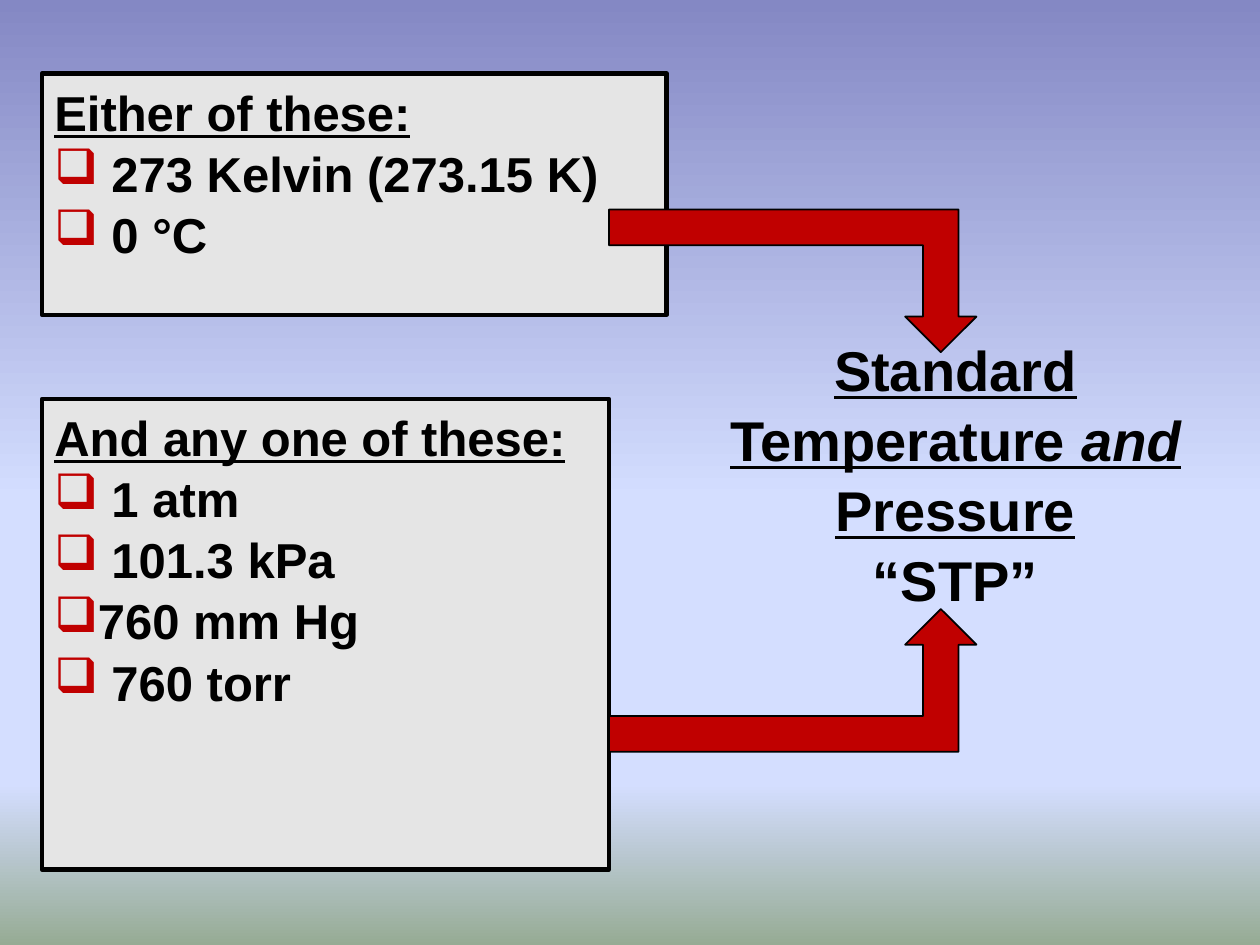
import lxml.etree
import pptx
import pptx.util
import pptx.dml.color
import pptx.enum.shapes
import pptx.enum.text
import pptx.oxml.ns
from pptx.util import Pt

COLORS = {
    "text": "000000",
    "panel": "E5E5E5",
    "accent": "C00000",
    "sky_top": "8488C4",
    "sky": "D4DEFF",
    "ground": "96AB94",
}
SKY_STOPS = [(0, "sky_top"), (53, "sky"), (83, "sky"), (100, "ground")]
FONT = "Arial"
LINE_SPACING = 1.04


def rgb(name):
    return pptx.dml.color.RGBColor.from_string(COLORS[name])


def add_xml(parent, tag, **attributes):
    child = lxml.etree.SubElement(parent, pptx.oxml.ns.qn(tag))
    for key, value in attributes.items():
        child.set(key, str(value))
    return child


def paint_background(slide):
    fill = slide.background.fill
    fill.gradient()
    fill.gradient_angle = 270
    stops = slide.element.xpath(".//p:bg//a:gsLst")[0]
    for stop in list(stops):
        stops.remove(stop)
    for percent, name in SKY_STOPS:
        stop = add_xml(stops, "a:gs", pos=percent * 1000)
        add_xml(stop, "a:srgbClr", val=COLORS[name])


def add_outlined(slide, preset, box, fill, width):
    shape = slide.shapes.add_shape(preset, *map(Pt, box))
    shape.shadow.inherit = False
    shape.fill.solid()
    shape.fill.fore_color.rgb = rgb(fill)
    shape.line.color.rgb = rgb("text")
    shape.line.width = Pt(width)
    return shape


def add_run(paragraph, text, size, underline=False, italic=False):
    run = paragraph.add_run()
    run.text = text
    run.font.name = FONT
    run.font.size = Pt(size)
    run.font.bold = True
    run.font.italic = italic
    run.font.underline = underline
    run.font.color.rgb = rgb("text")


def add_bullet(paragraph):
    properties = paragraph._p.get_or_add_pPr()
    bullet_color = add_xml(properties, "a:buClr")
    add_xml(bullet_color, "a:srgbClr", val=COLORS["accent"])
    add_xml(properties, "a:buChar", char="❑")


def add_conditions(slide, box, heading, choices):
    panel = add_outlined(
        slide, pptx.enum.shapes.MSO_SHAPE.RECTANGLE, box, "panel", 2.5)
    frame = panel.text_frame
    frame.word_wrap = True
    frame.vertical_anchor = pptx.enum.text.MSO_ANCHOR.TOP
    for index, text in enumerate([heading, *choices]):
        paragraph = frame.add_paragraph() if index else frame.paragraphs[0]
        paragraph.alignment = pptx.enum.text.PP_ALIGN.LEFT
        paragraph.line_spacing = LINE_SPACING
        if index:
            add_bullet(paragraph)
        add_run(paragraph, text, 28, underline=index == 0)


def add_title(slide, box):
    title = slide.shapes.add_textbox(*map(Pt, box))
    frame = title.text_frame
    frame.word_wrap = True
    frame.vertical_anchor = pptx.enum.text.MSO_ANCHOR.MIDDLE
    paragraph = frame.paragraphs[0]
    paragraph.alignment = pptx.enum.text.PP_ALIGN.CENTER
    paragraph.line_spacing = LINE_SPACING
    add_run(paragraph, "Standard Temperature ", 32, underline=True)
    add_run(paragraph, "and", 32, underline=True, italic=True)
    add_run(paragraph, " Pressure", 32, underline=True)
    paragraph.add_line_break()
    add_run(paragraph, "“STP”", 32)


def add_bent_arrow(slide, box, downward=False):
    arrow = add_outlined(
        slide, pptx.enum.shapes.MSO_SHAPE.BENT_UP_ARROW, box, "accent", 1)
    for index in range(3):
        arrow.adjustments[index] = 0.25
    if downward:
        arrow.rotation = 180
        arrow.element.spPr.find(pptx.oxml.ns.qn("a:xfrm")).set("flipH", "1")


def main():
    presentation = pptx.Presentation()
    presentation.slide_width = Pt(720)
    presentation.slide_height = Pt(540)
    slide = presentation.slides.add_slide(presentation.slide_layouts[6])
    paint_background(slide)
    add_title(slide, (390, 168, 312, 204))
    add_conditions(slide, (24, 42, 357, 138), "Either of these:",
                   [" 273 Kelvin (273.15 K)", " 0 °C"])
    add_conditions(slide, (24, 228, 324, 269), "And any one of these:",
                   [" 1 atm", " 101.3 kPa", "760 mm Hg", " 760 torr"])
    add_bent_arrow(slide, (348, 348, 210, 81.5))
    add_bent_arrow(slide, (348, 119.75, 210, 81.5), downward=True)
    presentation.save("out.pptx")


if __name__ == "__main__":
    main()
